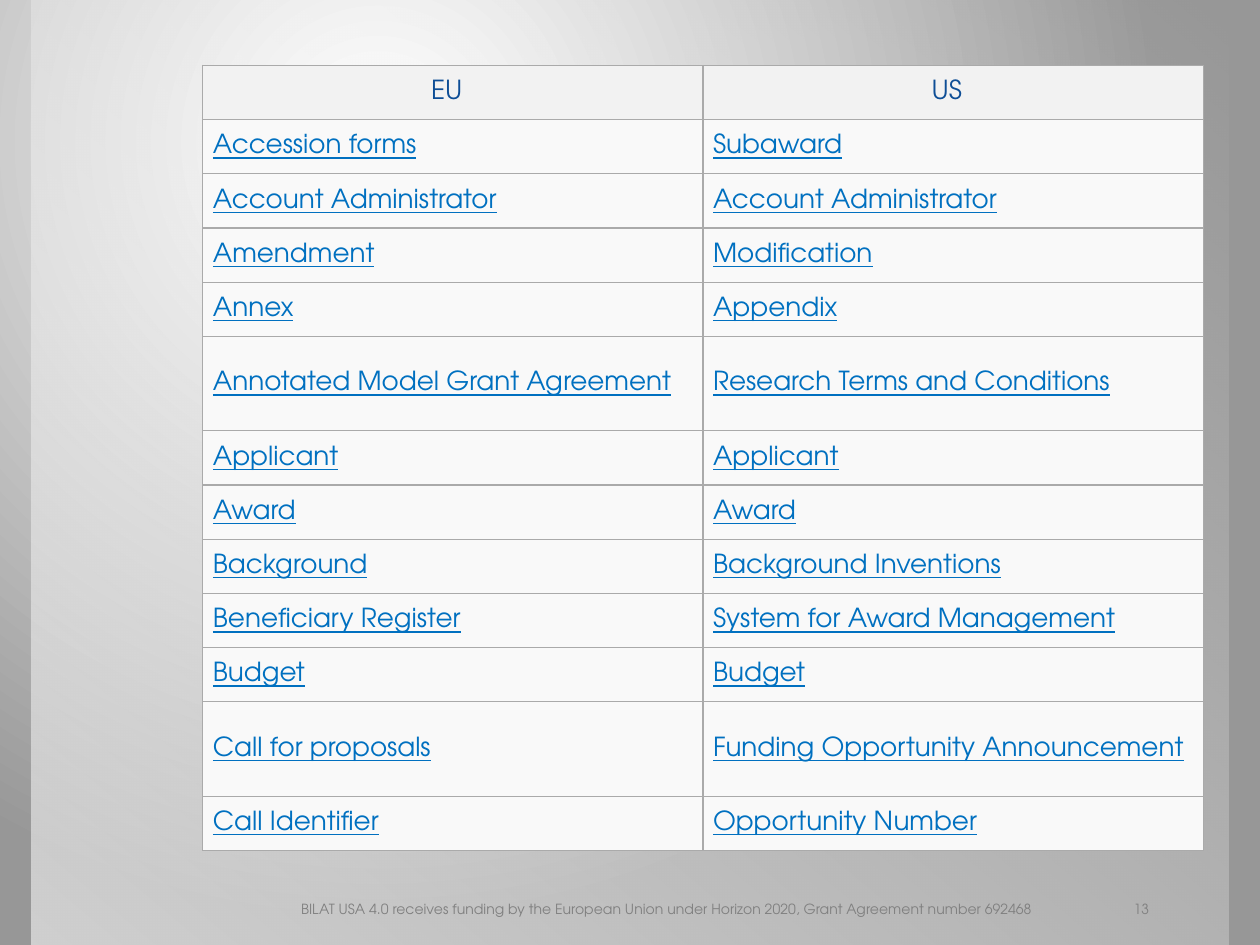
from dataclasses import dataclass

from lxml import etree
from pptx import Presentation
from pptx.dml.color import RGBColor
from pptx.enum import shapes, text
from pptx.oxml import ns
from pptx.util import Inches, Pt


@dataclass(frozen=True)
class Theme:
    font: str = "TeX Gyre Adventor"
    white: str = "FFFFFF"
    backdrop: str = "979797"
    header_fill: str = "F2F2F2"
    body_fill: str = "F9F9F9"
    header_text: str = "0E4E96"
    term_text: str = "0070C0"
    footer_text: str = "808080"
    border: str = "AAAAAA"
    border_width: float = 0.75
    table_size: int = 15
    footer_size: int = 8


THEME = Theme()
ROW_HEIGHT, TALL_ROW_HEIGHT = 0.43, 0.75
TALL_TERMS = {"Annotated Model Grant Agreement", "Call for proposals"}
TERMS = [
    ("EU", "US"),
    ("Accession forms", "Subaward"),
    ("Account Administrator", "Account Administrator"),
    ("Amendment", "Modification"),
    ("Annex", "Appendix"),
    ("Annotated Model Grant Agreement", "Research Terms and Conditions"),
    ("Applicant", "Applicant"),
    ("Award", "Award"),
    ("Background", "Background Inventions"),
    ("Beneficiary Register", "System for Award Management"),
    ("Budget", "Budget"),
    ("Call for proposals", "Funding Opportunity Announcement"),
    ("Call Identifier", "Opportunity Number"),
]
FOOTER = (
    "BILAT USA 4.0 receives funding by the European Union "
    "under Horizon 2020, Grant Agreement number 692468"
)


def add_child(parent, tag, **attributes):
    return etree.SubElement(parent, ns.qn(tag), attributes)


def set_gradient(fill, start, end):
    fill.gradient()
    for stop, color in zip(fill.gradient_stops, (start, end)):
        stop.color.rgb = RGBColor.from_string(color)


def style_paragraph(paragraph, size, color, alignment):
    paragraph.alignment = alignment
    paragraph.font.name = THEME.font
    paragraph.font.size = Pt(size)
    paragraph.font.color.rgb = RGBColor.from_string(color)


def paint_background(slide):
    background = slide.background
    set_gradient(background.fill, THEME.white, THEME.backdrop)
    linear = next(slide.element.iter(ns.qn("a:lin")))
    gradient = linear.getparent()
    gradient.remove(linear)
    circle = add_child(gradient, "a:path", path="circle")
    add_child(circle, "a:fillToRect", l="30000", t="30000", r="70000", b="100000")


def add_panel(slide, left, top, width, height):
    panel = slide.shapes.add_shape(
        shapes.MSO_SHAPE.RECTANGLE, left, top, width, height
    )
    panel.shadow.inherit = False
    panel.line.fill.background()
    set_gradient(panel.fill, THEME.white, THEME.white)
    panel.fill.gradient_angle = 230
    colors = panel.element.spPr.find(ns.qn("a:gradFill")).iter(ns.qn("a:srgbClr"))
    for color, alpha in zip(list(colors), ("0", "55000")):
        add_child(color, "a:alpha", val=alpha)


def add_borders(cell):
    properties = cell._tc.get_or_add_tcPr()
    for side in ("a:lnL", "a:lnR", "a:lnT", "a:lnB"):
        line = add_child(properties, side, w=str(Pt(THEME.border_width)))
        solid = add_child(line, "a:solidFill")
        add_child(solid, "a:srgbClr", val=THEME.border)


def fill_cell(cell, words, is_header):
    add_borders(cell)
    cell.fill.solid()
    cell.fill.fore_color.rgb = RGBColor.from_string(
        THEME.header_fill if is_header else THEME.body_fill
    )
    cell.vertical_anchor = text.MSO_ANCHOR.MIDDLE
    cell.margin_left = Inches(0.08)
    cell.margin_right = Inches(0.18 if is_header else 0.08)
    cell.margin_top = cell.margin_bottom = Inches(0.04)
    cell.text = words
    paragraph = cell.text_frame.paragraphs[0]
    if is_header:
        style_paragraph(
            paragraph, THEME.table_size, THEME.header_text, text.PP_ALIGN.CENTER
        )
    else:
        style_paragraph(
            paragraph, THEME.table_size, THEME.term_text, text.PP_ALIGN.LEFT
        )
        paragraph.font.underline = True
    paragraph.font.bold = False


def add_term_table(slide, left, top, width, height):
    table = slide.shapes.add_table(
        len(TERMS), len(TERMS[0]), left, top, width, height
    ).table
    table.horz_banding = False
    for row, terms in enumerate(TERMS):
        tall = terms[0] in TALL_TERMS
        table.rows[row].height = Inches(TALL_ROW_HEIGHT if tall else ROW_HEIGHT)
        for column, words in enumerate(terms):
            fill_cell(table.cell(row, column), words, row == 0)


def add_footer_text(slide, words, alignment, left, top, width, height):
    frame = slide.shapes.add_textbox(left, top, width, height).text_frame
    frame.word_wrap = True
    frame.vertical_anchor = text.MSO_ANCHOR.BOTTOM
    frame.margin_left = frame.margin_right = Inches(0.13)
    frame.margin_top = frame.margin_bottom = Inches(0.07)
    frame.text = words
    style_paragraph(
        frame.paragraphs[0], THEME.footer_size, THEME.footer_text, alignment
    )


def add_footer(slide, left, top, width, height):
    number_width = Inches(0.47)
    note_width = width - number_width
    add_footer_text(
        slide, FOOTER, text.PP_ALIGN.CENTER, left, top, note_width, height
    )
    add_footer_text(
        slide, "13", text.PP_ALIGN.RIGHT,
        left + note_width, top, number_width, height,
    )


def main():
    presentation = Presentation()
    presentation.slide_width = Inches(10)
    presentation.slide_height = Inches(7.5)
    slide = presentation.slides.add_slide(presentation.slide_layouts[6])
    paint_background(slide)
    add_panel(slide, Inches(0.25), Inches(0), Inches(9.5), Inches(7.5))
    add_term_table(slide, Inches(1.61), Inches(0.52), Inches(7.94), Inches(6.23))
    add_footer(slide, Inches(1.81), Inches(7), Inches(7.44), Inches(0.35))
    presentation.save("out.pptx")


if __name__ == "__main__":
    main()
